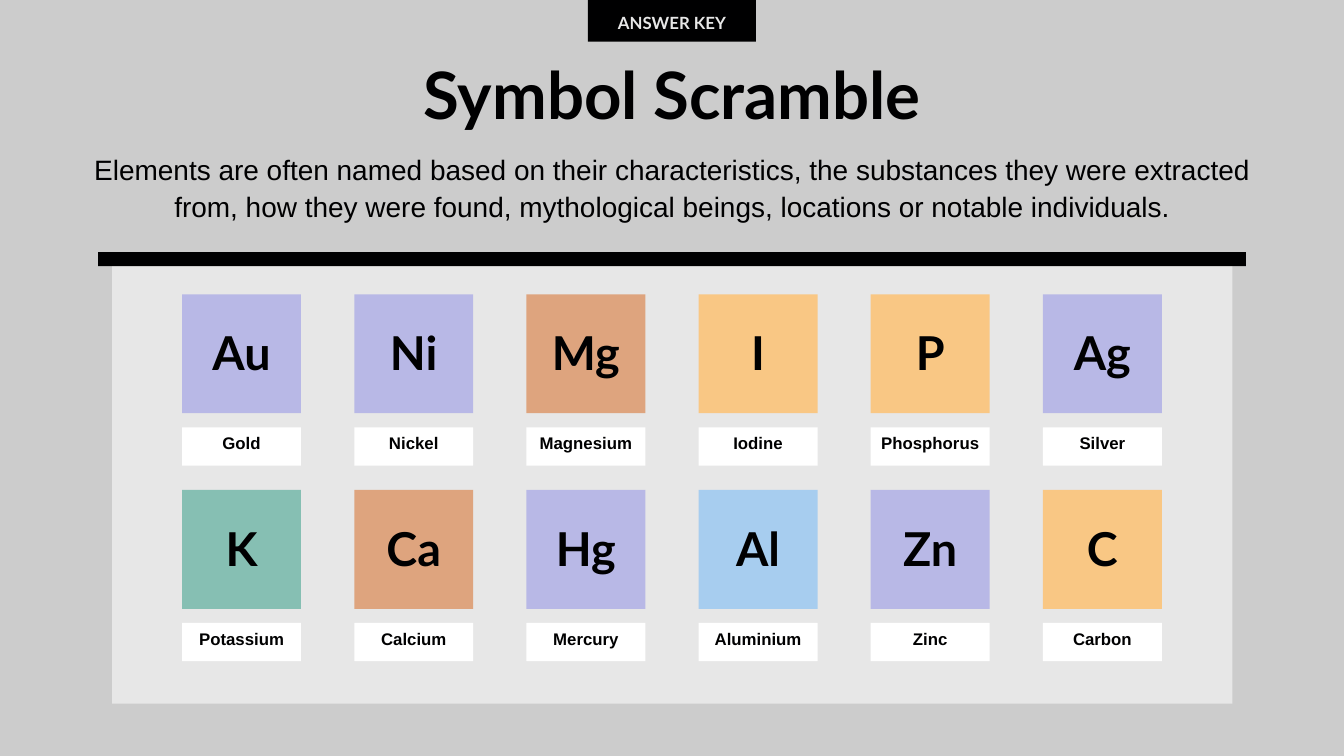
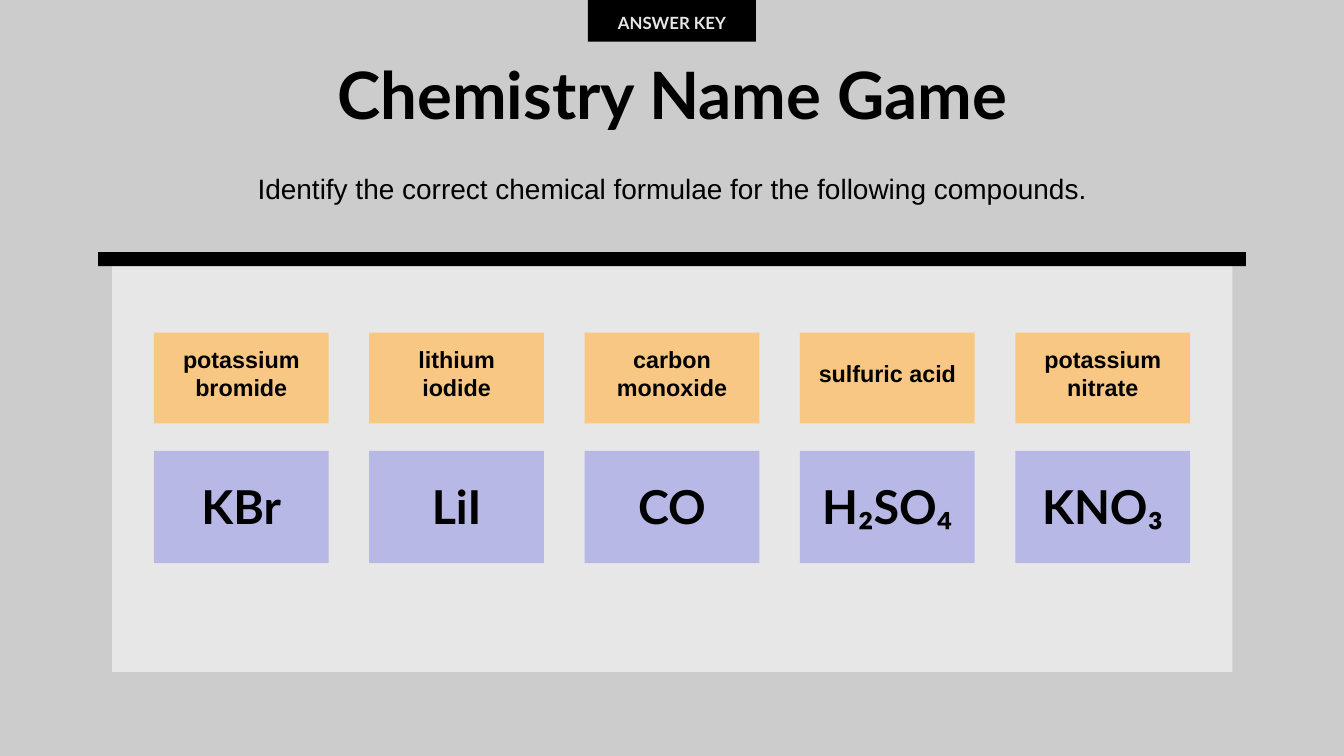
from pptx import Presentation
from pptx.dml.color import RGBColor
from pptx.enum.shapes import MSO_SHAPE
from pptx.enum.text import MSO_ANCHOR, PP_ALIGN
from pptx.util import Inches, Pt

WIDTH, HEIGHT = 20, 11.25
BLACK, WHITE, GREY, PALE = "000001", "FFFFFF", "CCCCCC", "E7E7E7"
LILAC, CLAY, AMBER, GREEN, BLUE = "B8B8E6", "DEA47E", "F9C784", "86BFB3", "A7CDEF"
HEADING, BODY = "Lato", "Arial"

ELEMENTS = [
    [("Au", "Gold", LILAC), ("Ni", "Nickel", LILAC), ("Mg", "Magnesium", CLAY),
     ("I", "Iodine", AMBER), ("P", "Phosphorus", AMBER), ("Ag", "Silver", LILAC)],
    [("K", "Potassium", GREEN), ("Ca", "Calcium", CLAY), ("Hg", "Mercury", LILAC),
     ("Al", "Aluminium", BLUE), ("Zn", "Zinc", LILAC), ("C", "Carbon", AMBER)],
]
COMPOUNDS = [
    ("potassium bromide", "KBr"), ("lithium iodide", "LiI"), ("carbon monoxide", "CO"),
    ("sulfuric acid", "H₂SO₄"), ("potassium nitrate", "KNO₃"),
]


def rgb(color):
    """Turn a hex string into a colour."""
    return RGBColor.from_string(color)


def write(tf, text, size=18, font=BODY, color=BLACK, bold=True, leading=21.6,
          anchor=MSO_ANCHOR.MIDDLE, side=0, bottom=0):
    """Put one centred paragraph into a text frame."""
    tf.word_wrap = True
    tf.vertical_anchor = anchor
    tf.margin_left = tf.margin_right = Inches(side)
    tf.margin_top, tf.margin_bottom = 0, Inches(bottom)
    p = tf.paragraphs[0]
    p.alignment = PP_ALIGN.CENTER
    p.line_spacing = Pt(leading)
    r = p.add_run()
    r.text = text
    r.font.name, r.font.size, r.font.bold = font, Pt(size), bold
    r.font.color.rgb = rgb(color)


def columns(margin, width, count):
    """Return the left edges of equal columns centred on the slide."""
    pitch = (WIDTH - 2 * margin - width) / (count - 1)
    return [margin + i * pitch for i in range(count)]


class Deck:
    """Hold the shared style and the current slide."""

    def __init__(self):
        """Open a presentation of the right size."""
        self.prs = Presentation()
        self.prs.slide_width, self.prs.slide_height = Inches(WIDTH), Inches(HEIGHT)
        self.s = None

    def box(self, x, y, w, h, fill, text=None, **style):
        """Draw a plain rectangle with optional text."""
        sp = self.s.shapes.add_shape(
            MSO_SHAPE.RECTANGLE, Inches(x), Inches(y), Inches(w), Inches(h))
        sp.shadow.inherit = False
        sp.fill.solid()
        sp.fill.fore_color.rgb = rgb(fill)
        sp.line.fill.background()
        if text:
            write(sp.text_frame, text, **style)

    def text(self, x, y, w, h, text, **style):
        """Add a text box."""
        sp = self.s.shapes.add_textbox(Inches(x), Inches(y), Inches(w), Inches(h))
        write(sp.text_frame, text, anchor=MSO_ANCHOR.TOP, **style)

    def symbol(self, x, y, w, h, fill, text):
        """Draw a tile with a large chemical symbol."""
        self.box(x, y, w, h, fill, text, size=50, font=HEADING, leading=60,
                 side=0.06, bottom=0.05)

    def slide(self, title, intro, intro_at, panel_height):
        """Start a slide with its tag, title, intro, bar and panel."""
        self.s = self.prs.slides.add_slide(self.prs.slide_layouts[6])
        bg = self.s.background.fill
        bg.solid()
        bg.fore_color.rgb = rgb(GREY)
        self.box(1.67, 3.96, 16.67, panel_height, PALE)
        self.box(1.46, 3.75, 17.08, 0.21, BLACK)
        self.text(*intro_at, intro, size=30, bold=False, leading=39)
        self.text(1.67, 0.85, 16.67, 1.14, title, size=70, font=HEADING, leading=80.5)
        self.box(8.75, -0.21, 2.5, 0.83, BLACK, "ANSWER KEY", font=HEADING, color=PALE,
                 anchor=MSO_ANCHOR.BOTTOM, side=0.14, bottom=0.13)


def symbol_scramble(deck):
    """Build the slide of element symbols and names."""
    deck.slide("Symbol Scramble",
               "Elements are often named based on their characteristics, the substances "
               "they were extracted from, how they were found, mythological beings, "
               "locations or notable individuals.", (1.4, 2.23, 17.21, 1.16), 6.51)
    tile = 1.77
    for row, elements in enumerate(ELEMENTS):
        y = 4.38 + row * 2.91
        for x, (symbol, name, fill) in zip(columns(2.71, tile, len(elements)), elements):
            deck.symbol(x, y, tile, tile, fill, symbol)
            deck.box(x, y + 1.98, tile, 0.57, WHITE, name, side=0.03, bottom=0.1)


def name_game(deck):
    """Build the slide of compounds and formulae."""
    deck.slide("Chemistry Name Game",
               "Identify the correct chemical formulae for the following compounds.",
               (1.67, 2.51, 16.67, 0.61), 6.04)
    width = 2.6
    for x, (name, formula) in zip(columns(2.29, width, len(COMPOUNDS)), COMPOUNDS):
        deck.box(x, 4.95, width, 1.35, AMBER, name, size=25, leading=30,
                 side=0.19, bottom=0.15)
        deck.symbol(x, 6.71, width, 1.67, LILAC, formula)


def main():
    """Build both slides and save them."""
    deck = Deck()
    symbol_scramble(deck)
    name_game(deck)
    deck.prs.save("out.pptx")


if __name__ == "__main__":
    main()
